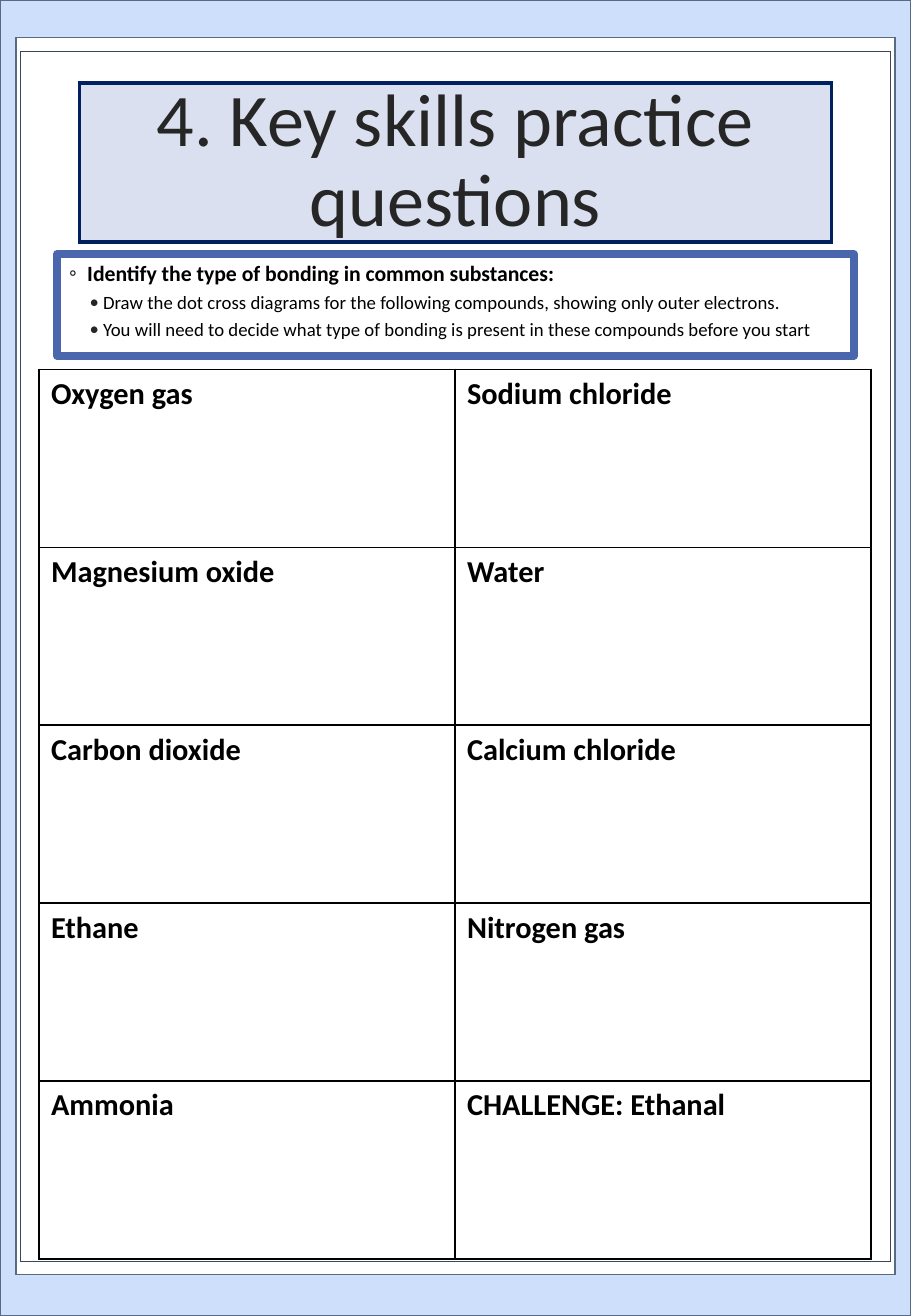
import pptx
import pptx.util
import pptx.dml.color
import pptx.enum.shapes
import pptx.enum.text
import pptx.oxml
import pptx.oxml.ns

W, H = 7.5, 10.83
INK = "000000"
inch = pptx.util.Inches
qn = pptx.oxml.ns.qn
NS = pptx.oxml.ns.nsdecls("a")


def rgb(code):
    return pptx.dml.color.RGBColor.from_string(code)


def add_box(width, height, top, fill, line, weight, join="miter"):
    sp = s.shapes.add_shape(pptx.enum.shapes.MSO_SHAPE.RECTANGLE, inch((W - width) / 2),
                            inch(top), inch(width), inch(height))
    sp.shadow.inherit = False
    if fill:
        sp.fill.solid()
        sp.fill.fore_color.rgb = rgb(fill)
    else:
        sp.fill.background()
    sp.line.color.rgb = rgb(line)
    sp.line.width = pptx.util.Pt(weight)
    sp.line._get_or_add_ln().append(pptx.oxml.parse_xml(f"<a:{join} {NS}/>"))
    tf = sp.text_frame
    tf.word_wrap = True
    return sp


prs = pptx.Presentation()
prs.slide_width, prs.slide_height = inch(W), inch(H)
s = prs.slides.add_slide(prs.slide_layouts[6])

page = add_box(W, H, 0, "ACCBF9", "596A85", 0.5)
page.fill._xPr.find(qn("a:solidFill"))[0].append(
    pptx.oxml.parse_xml(f'<a:alpha {NS} val="60000"/>'))
add_box(7.24, 10.18, 0.31, "FFFFFF", "596A85", 1)
add_box(7.16, 9.96, 0.42, None, "3B4759", 0.5)

title = add_box(6.19, 1.31, 0.68, "DAE0EF", "002060", 2.25)
tf = title.text_frame
tf.text = "4. Key skills practice questions"
tf.vertical_anchor = pptx.enum.text.MSO_ANCHOR.MIDDLE
p = tf.paragraphs[0]
p.alignment = pptx.enum.text.PP_ALIGN.CENTER
p.line_spacing = 0.9
r = p.runs[0]
r.font.name, r.font.size = "Calibri", pptx.util.Pt(44)
r.font.color.rgb = rgb("262626")

task = add_box(6.56, 0.84, 2.09, None, "4A66AC", 4.5, "round")
tf = task.text_frame
tf.vertical_anchor = pptx.enum.text.MSO_ANCHOR.TOP
lines = [
    (" Identify the type of bonding in common substances:", 0),
    ("Draw the dot cross diagrams for the following compounds, showing only outer electrons.", 1),
    ("You will need to decide what type of bonding is present in these compounds before you start", 1),
]
tf.text = "\n".join(text for text, level in lines)
for p, (text, level) in zip(tf.paragraphs, lines):
    p.level = level
    p.alignment = pptx.enum.text.PP_ALIGN.LEFT
    p.line_spacing = (1.0, 1.2)[level]
    p.space_before = pptx.util.Pt((5.1, 0)[level])
    pPr = p._p.get_or_add_pPr()
    pPr.set("marL", str(inch((0.11, 0.28)[level])))
    pPr.set("indent", str(inch(-0.11)))
    pPr.append(pptx.oxml.parse_xml(f'<a:buClr {NS}><a:srgbClr val="262626"/></a:buClr>'))
    pPr.append(pptx.oxml.parse_xml(f'<a:buFont {NS} typeface="Calibri"/>'))
    pPr.append(pptx.oxml.parse_xml(f'<a:buChar {NS} char="{"◦•"[level]}"/>'))
    r = p.runs[0]
    r.font.name, r.font.size = "Calibri", pptx.util.Pt((12.9, 11.1)[level])
    r.font.bold = level == 0
    r.font.color.rgb = rgb(INK)

compounds = [
    ("Oxygen gas", "Sodium chloride"),
    ("Magnesium oxide", "Water"),
    ("Carbon dioxide", "Calcium chloride"),
    ("Ethane", "Nitrogen gas"),
    ("Ammonia", "CHALLENGE: Ethanal"),
]
tbl = s.shapes.add_table(len(compounds), 2, inch(0.32), inch(3.04), inch(6.85), inch(7.32)).table
tbl.first_row = tbl.horz_banding = False
for row, names in zip(tbl.rows, compounds):
    for cell, name in zip(row.cells, names):
        cell.text = name
        r = cell.text_frame.paragraphs[0].runs[0]
        r.font.name, r.font.size, r.font.bold = "Calibri", pptx.util.Pt(18), True
        r.font.color.rgb = rgb(INK)
        tcPr = cell._tc.get_or_add_tcPr()
        for side in ("lnL", "lnR", "lnT", "lnB"):
            tcPr.append(pptx.oxml.parse_xml(
                f'<a:{side} {NS} w="{pptx.util.Pt(1)}"><a:solidFill>'
                f'<a:srgbClr val="{INK}"/></a:solidFill></a:{side}>'))
        cell.fill.background()

prs.save("out.pptx")
